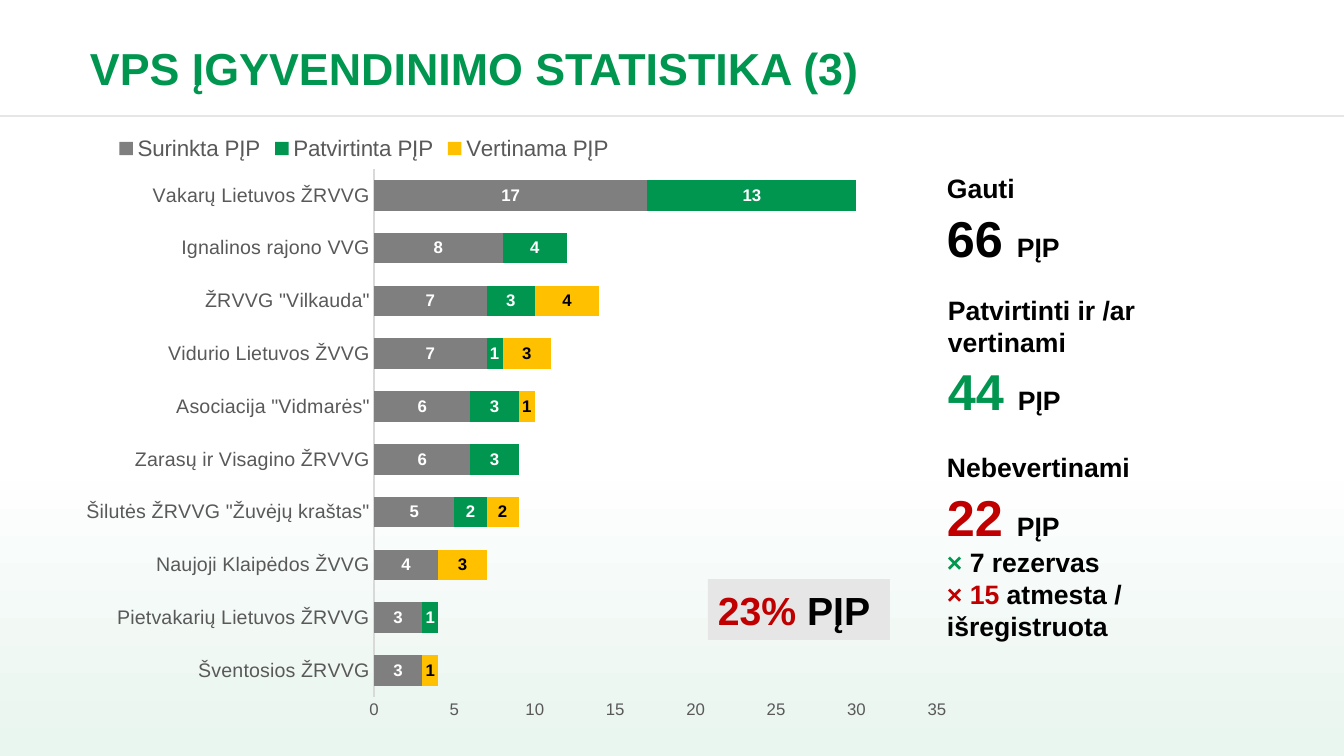
from lxml.etree import SubElement
from pptx import Presentation
from pptx.chart.data import CategoryChartData
from pptx.dml.color import RGBColor
from pptx.enum.chart import XL_CHART_TYPE, XL_LEGEND_POSITION, XL_TICK_MARK
from pptx.enum.shapes import MSO_CONNECTOR, MSO_SHAPE
from pptx.enum.text import MSO_ANCHOR
from pptx.oxml import parse_xml
from pptx.oxml.ns import nsdecls, qn
from pptx.util import Emu, Pt

PX = 914400 / 100.8
FONT = "Arial"
GREEN, RED, BLACK, GREY, PALE = "009650", "C00000", "000000", "595959", "E6E6E6"

GROUPS = [
    ("Šventosios ŽRVVG", 3, 0, 1),
    ("Pietvakarių Lietuvos ŽRVVG", 3, 1, 0),
    ("Naujoji Klaipėdos ŽVVG", 4, 0, 3),
    ('Šilutės ŽRVVG "Žuvėjų kraštas"', 5, 2, 2),
    ("Zarasų ir Visagino ŽRVVG", 6, 3, 0),
    ('Asociacija "Vidmarės"', 6, 3, 1),
    ("Vidurio Lietuvos ŽVVG", 7, 1, 3),
    ('ŽRVVG "Vilkauda"', 7, 3, 4),
    ("Ignalinos rajono VVG", 8, 4, 0),
    ("Vakarų Lietuvos ŽRVVG", 17, 13, 0),
]
SERIES = [
    ("Surinkta PĮP", "7F7F7F", "FFFFFF"),
    ("Patvirtinta PĮP", GREEN, "FFFFFF"),
    ("Vertinama PĮP", "FFC000", BLACK),
]


def px(*lengths):
    """Turn pixel lengths into EMU."""
    return [Emu(round(n * PX)) for n in lengths]


def rgb(color):
    """Turn a hex string into a colour."""
    return RGBColor.from_string(color)


def set_font(font, size, color, bold=False):
    """Apply the deck font with a size, colour and weight."""
    for name, value in {"name": FONT, "size": Pt(size), "bold": bold}.items():
        setattr(font, name, value)
    font.color.rgb = rgb(color)


def write(tf, lines, anchor=MSO_ANCHOR.TOP):
    """Fill a text frame with bold lines of (text, size, colour) runs."""
    tf.word_wrap = True
    tf.vertical_anchor = anchor
    for i, runs in enumerate(lines):
        p = tf.paragraphs[0] if i == 0 else tf.add_paragraph()
        if i and runs[0][1] > 30:
            p.space_before = Pt(2)
        for text, size, color in runs:
            r = p.add_run()
            r.text = text
            set_font(r.font, size, color, True)


def add_text(s, box, lines, anchor=MSO_ANCHOR.TOP):
    """Add a text box."""
    write(s.shapes.add_textbox(*px(*box)).text_frame, lines, anchor)


def add_rect(s, box):
    """Add a rectangle without outline or shadow."""
    sp = s.shapes.add_shape(MSO_SHAPE.RECTANGLE, *px(*box))
    sp.shadow.inherit = False
    sp.line.fill.background()
    return sp


def add_backdrop(s):
    """Add the gradient background and the line under the title."""
    fill = add_rect(s, (0, 0, 1344, 756)).fill
    fill.gradient()
    fill.gradient_angle = 90
    for stop, (position, color) in zip(fill.gradient_stops, [(0, "E9F5EF"), (0.4, "FFFFFF")]):
        stop.position = position
        stop.color.rgb = rgb(color)
    line = s.shapes.add_connector(MSO_CONNECTOR.STRAIGHT, *px(0, 116, 1344, 116))
    line.line.color.rgb = rgb(PALE)
    line.line.width = Pt(1)
    SubElement(line._element.spPr, qn("a:effectLst"))


def place(element, index, inner=False, **fractions):
    """Give a chart part a manual layout in fractions of the chart."""
    for old in element.findall(qn("c:layout")):
        element.remove(old)
    layout = parse_xml(f"<c:layout {nsdecls('c')}><c:manualLayout/></c:layout>")
    settings = {"layoutTarget": "inner"} if inner else {}
    settings.update(xMode="edge", yMode="edge", **fractions)
    for name, value in settings.items():
        SubElement(layout[0], qn(f"c:{name}")).set("val", str(value))
    element.insert(index, layout)


def add_bars(s, box):
    """Add the stacked bar chart of projects by group."""
    data = CategoryChartData(number_format="0")
    data.categories = [group[0] for group in GROUPS]
    for i, (name, _, _) in enumerate(SERIES, 1):
        data.add_series(name, [group[i] for group in GROUPS])
    chart = s.shapes.add_chart(XL_CHART_TYPE.BAR_STACKED, *px(*box), data).chart
    set_font(chart.font, 10, BLACK)
    chart.has_title = False
    chart.has_legend = True
    chart.legend.position = XL_LEGEND_POSITION.TOP
    chart.legend.include_in_layout = False
    set_font(chart.legend.font, 16, GREY)

    plot = chart.plots[0]
    for name, value in {"gap_width": 72, "overlap": 100, "vary_by_categories": False}.items():
        setattr(plot, name, value)
    for series, (_, color, label_color) in zip(plot.series, SERIES):
        series.format.fill.solid()
        series.format.fill.fore_color.rgb = rgb(color)
        labels = series.data_labels
        label_format = {"show_value": True, "number_format": "0;;;", "number_format_is_linked": False}
        for name, value in label_format.items():
            setattr(labels, name, value)
        set_font(labels.font, 12, label_color, True)

    for axis, size in ((chart.category_axis, 14), (chart.value_axis, 12)):
        axis.major_tick_mark = axis.minor_tick_mark = XL_TICK_MARK.NONE
        axis.has_major_gridlines = False
        set_font(axis.tick_labels.font, size, GREY)
    chart.category_axis.format.line.color.rgb = rgb("D9D9D9")
    chart.category_axis.format.line.width = Pt(0.75)
    chart.value_axis.format.line.fill.background()
    for name, value in {"minimum_scale": 0, "maximum_scale": 35, "major_unit": 5}.items():
        setattr(chart.value_axis, name, value)

    left, top, width, height = box
    place(chart._chartSpace.chart.plotArea, 0, True,
          x=(374 - left) / width, y=(169 - top) / height, w=563 / width, h=528 / height)
    place(chart.legend._element, 1, x=(112 - left) / width, y=(132 - top) / height)


def total(number, color):
    """Return the runs of a large count of projects."""
    return [(f"{number} ", 36, color), ("PĮP", 19, BLACK)]


def main():
    """Build the slide."""
    prs = Presentation()
    prs.slide_width, prs.slide_height = px(1344, 756)
    s = prs.slides.add_slide(prs.slide_layouts[6])
    add_backdrop(s)
    add_bars(s, (69, 116, 896, 616))
    add_text(s, (80, 24, 1077, 88), [[("VPS ĮGYVENDINIMO STATISTIKA (3)", 32, GREEN)]], MSO_ANCHOR.MIDDLE)
    add_text(s, (938, 289, 228, 141), [
        [("Patvirtinti ir /ar", 19, BLACK)],
        [("vertinami", 19, BLACK)],
        total(44, GREEN),
    ])
    add_text(s, (937, 167, 228, 107), [[("Gauti", 19, BLACK)], total(66, BLACK)])
    add_text(s, (937, 446, 391, 234), [
        [("Nebevertinami", 19, BLACK)],
        total(22, RED),
        [("×", 19, GREEN), (" 7 rezervas", 19, BLACK)],
        [("× 15 ", 19, RED), ("atmesta /", 19, BLACK)],
        [("išregistruota", 19, BLACK)],
    ])
    share = add_rect(s, (708, 579, 182, 61))
    share.fill.solid()
    share.fill.fore_color.rgb = rgb(PALE)
    write(share.text_frame, [[("23% ", 28, RED), ("PĮP", 28, BLACK)]], MSO_ANCHOR.MIDDLE)
    share.text_frame.paragraphs[0].alignment = 1
    prs.save("out.pptx")


if __name__ == "__main__":
    main()
